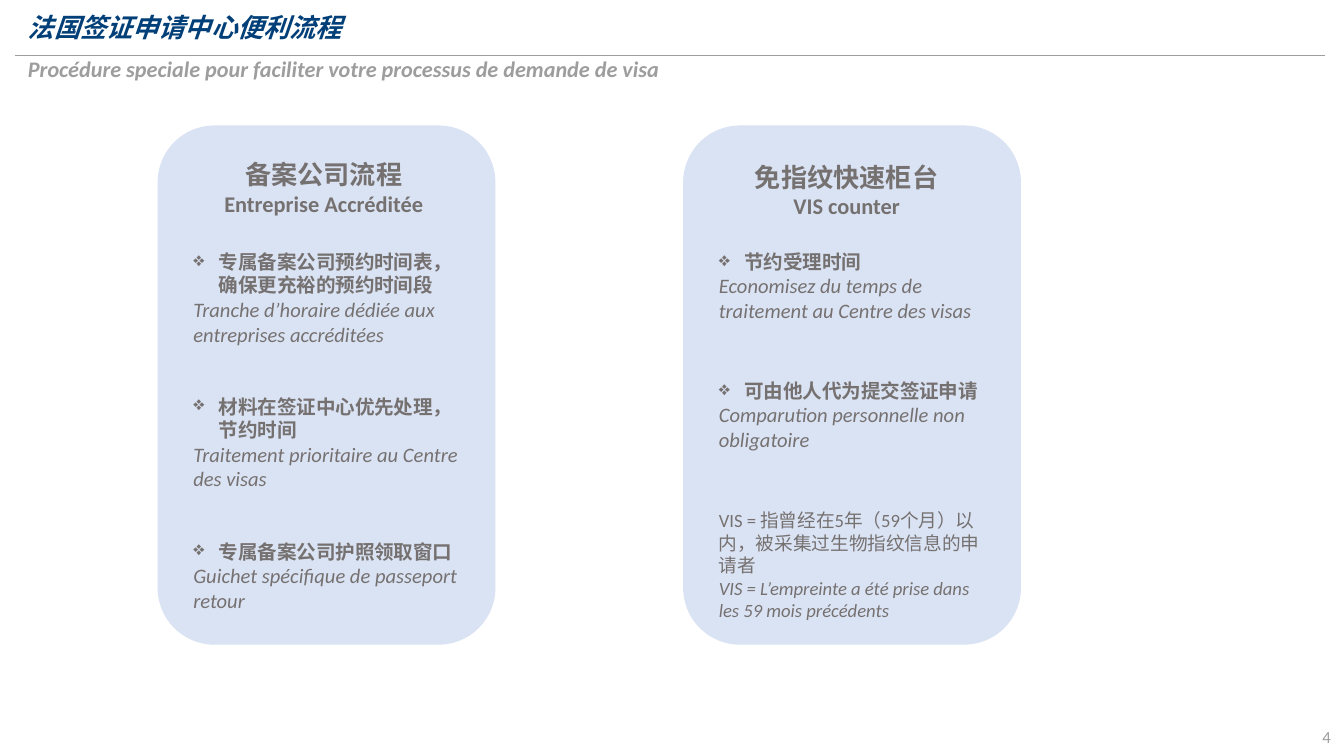
from dataclasses import dataclass
from typing import Optional

import lxml.etree
import pptx
import pptx.dml.color
import pptx.enum.shapes
import pptx.enum.text
import pptx.oxml.ns
import pptx.util

COLORS = {"navy": "003F77", "grey": "9D9D9D", "text": "767171", "card": "DAE3F3"}
LATIN, HAN = "Calibri", "Noto Sans CJK SC"
COLUMNS, ROWS = 100, 56.25
CELL = pptx.util.Inches(10) / COLUMNS
CARD_LEFT, CARD_TOP, CARD_PITCH = 11.8, 9.4, 39.1
CARD_WIDTH, CARD_HEIGHT = 25, 38.5
INDENT = pptx.util.Inches(0.19)
ALIGN = pptx.enum.text.PP_ALIGN
ANCHOR = pptx.enum.text.MSO_ANCHOR
qn = pptx.oxml.ns.qn


@dataclass
class Line:
    text: str
    size: float
    bold: bool = False
    italic: bool = False
    color: str = "text"
    bullet: bool = False
    before: float = 0
    spacing: Optional[float] = None
    align: ALIGN = ALIGN.LEFT


@dataclass
class Box:
    """A text box, placed in grid cells."""
    left: float
    top: float
    width: float
    height: float
    lines: list[Line]
    wrap: bool = True
    anchor: ANCHOR = ANCHOR.TOP


def cells(*values: float) -> list[int]:
    return [round(value * CELL) for value in values]


def rgb(name: str) -> pptx.dml.color.RGBColor:
    return pptx.dml.color.RGBColor.from_string(COLORS[name])


def heading(chinese: str, french: str) -> list[Line]:
    return [Line(chinese, 14, bold=True, align=ALIGN.CENTER),
            Line(french, 12, bold=True, align=ALIGN.CENTER)]


def benefit(chinese: str, *french: str, before: float = 0) -> list[Line]:
    return [Line(chinese, 10.5, bold=True, bullet=True, before=before),
            *(Line(text, 11, italic=True) for text in french)]


def add_bullet(p) -> None:
    pPr = p._p.get_or_add_pPr()
    pPr.set("marL", str(INDENT))
    pPr.set("indent", str(-INDENT))
    lxml.etree.SubElement(pPr, qn("a:buChar")).set("char", "❖")


def add_line(p, line: Line) -> None:
    if line.bullet:
        add_bullet(p)
    p.alignment = line.align
    if line.before:
        p.space_before = pptx.util.Pt(line.before)
    if line.spacing:
        p.line_spacing = line.spacing
    r = p.add_run()
    r.text = line.text
    r.font.size = pptx.util.Pt(line.size)
    r.font.bold, r.font.italic = line.bold, line.italic
    r.font.color.rgb = rgb(line.color)
    r.font.name = LATIN
    lxml.etree.SubElement(r._r.get_or_add_rPr(), qn("a:ea")).set("typeface", HAN)


def add_box(s, box: Box) -> None:
    sp = s.shapes.add_textbox(*cells(box.left, box.top, box.width, box.height))
    tf = sp.text_frame
    tf.word_wrap = box.wrap
    tf.vertical_anchor = box.anchor
    tf.margin_left = tf.margin_right = pptx.util.Inches(0.1)
    tf.margin_top = tf.margin_bottom = pptx.util.Inches(0.05)
    for i, line in enumerate(box.lines):
        add_line(tf.add_paragraph() if i else tf.paragraphs[0], line)


def add_card(s, index: int) -> None:
    sp = s.shapes.add_shape(
        pptx.enum.shapes.MSO_SHAPE.ROUNDED_RECTANGLE,
        *cells(CARD_LEFT + index * CARD_PITCH, CARD_TOP, CARD_WIDTH, CARD_HEIGHT))
    sp.shadow.inherit = False
    sp.fill.solid()
    sp.fill.fore_color.rgb = sp.line.color.rgb = rgb("card")
    sp.line.width = pptx.util.Pt(1)


def add_rule(s) -> None:
    x1, x2, y = cells(1.1, 98.6, 4.15)
    line = s.shapes.add_connector(pptx.enum.shapes.MSO_CONNECTOR.STRAIGHT, x1, y, x2, y)
    line.line.color.rgb = rgb("grey")
    line.line.width = pptx.util.Pt(0.5)
    lxml.etree.SubElement(line._element.spPr, qn("a:effectLst"))


TITLES = [
    Box(1.1, 0.6, 63.4, 2.3, [
        Line("法国签证申请中心便利流程", 14, True, True, "navy", spacing=0.9)]),
    Box(1.1, 4.2, 63.4, 2.3, [
        Line("Procédure speciale pour faciliter votre processus de demande de visa",
             11.9, True, True, "grey", spacing=0.7)]),
    Box(95, 53.3, 5, 3, [Line("4", 9, color="grey", align=ALIGN.RIGHT)],
        anchor=ANCHOR.MIDDLE),
]

CARDS = [
    [
        Box(15.6, 11.3, 17, 5.4, heading("备案公司流程", "Entreprise Accréditée"), wrap=False),
        Box(13.4, 18.1, 21.7, 28.5, [
            *benefit("专属备案公司预约时间表，确保更充裕的预约时间段",
                     "Tranche d’horaire dédiée aux", "entreprises accréditées"),
            *benefit("材料在签证中心优先处理，节约时间",
                     "Traitement prioritaire au Centre des visas", before=26),
            *benefit("专属备案公司护照领取窗口",
                     "Guichet spécifique de passeport retour", before=26)]),
    ],
    [
        Box(55.1, 11.5, 15.8, 5.4, heading("免指纹快速柜台", "VIS counter"), wrap=False),
        Box(52.5, 18.1, 22.2, 6.5, benefit(
            "节约受理时间", "Economisez du temps de traitement au Centre des visas")),
        Box(52.5, 27.7, 22.2, 6.5, benefit(
            "可由他人代为提交签证申请", "Comparution personnelle non obligatoire")),
        Box(52.5, 37.4, 22.2, 11.6, [
            Line("VIS = 指曾经在5年（59个月）以内，被采集过生物指纹信息的申请者", 10),
            Line("VIS = L’empreinte a été prise dans les 59 mois précédents", 10, italic=True)]),
    ],
]


def main() -> None:
    prs = pptx.Presentation()
    prs.slide_width, prs.slide_height = cells(COLUMNS, ROWS)
    s = prs.slides.add_slide(prs.slide_layouts[6])
    add_rule(s)
    for box in TITLES:
        add_box(s, box)
    for index, boxes in enumerate(CARDS):
        add_card(s, index)
        for box in boxes:
            add_box(s, box)
    prs.save("out.pptx")


if __name__ == "__main__":
    main()
